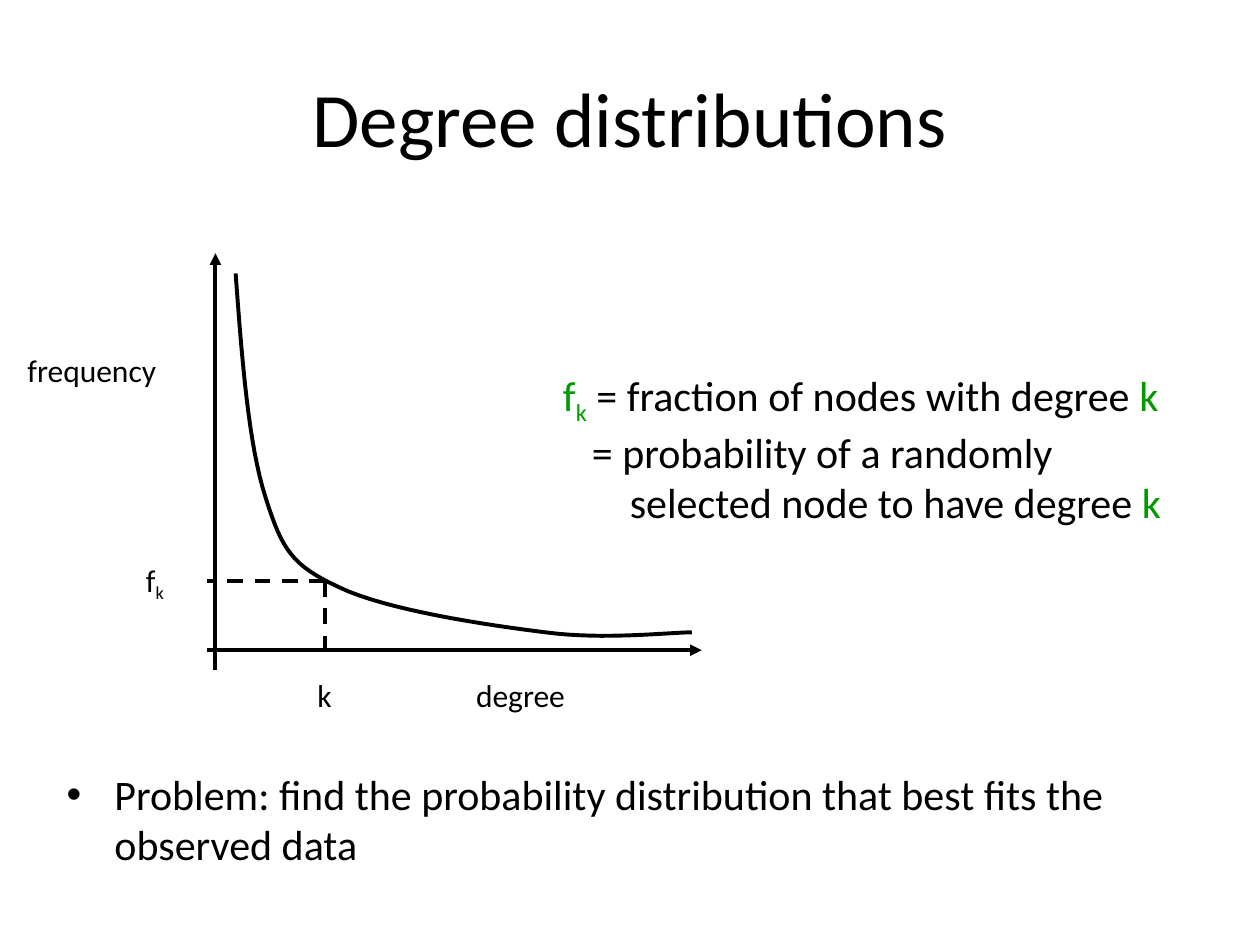
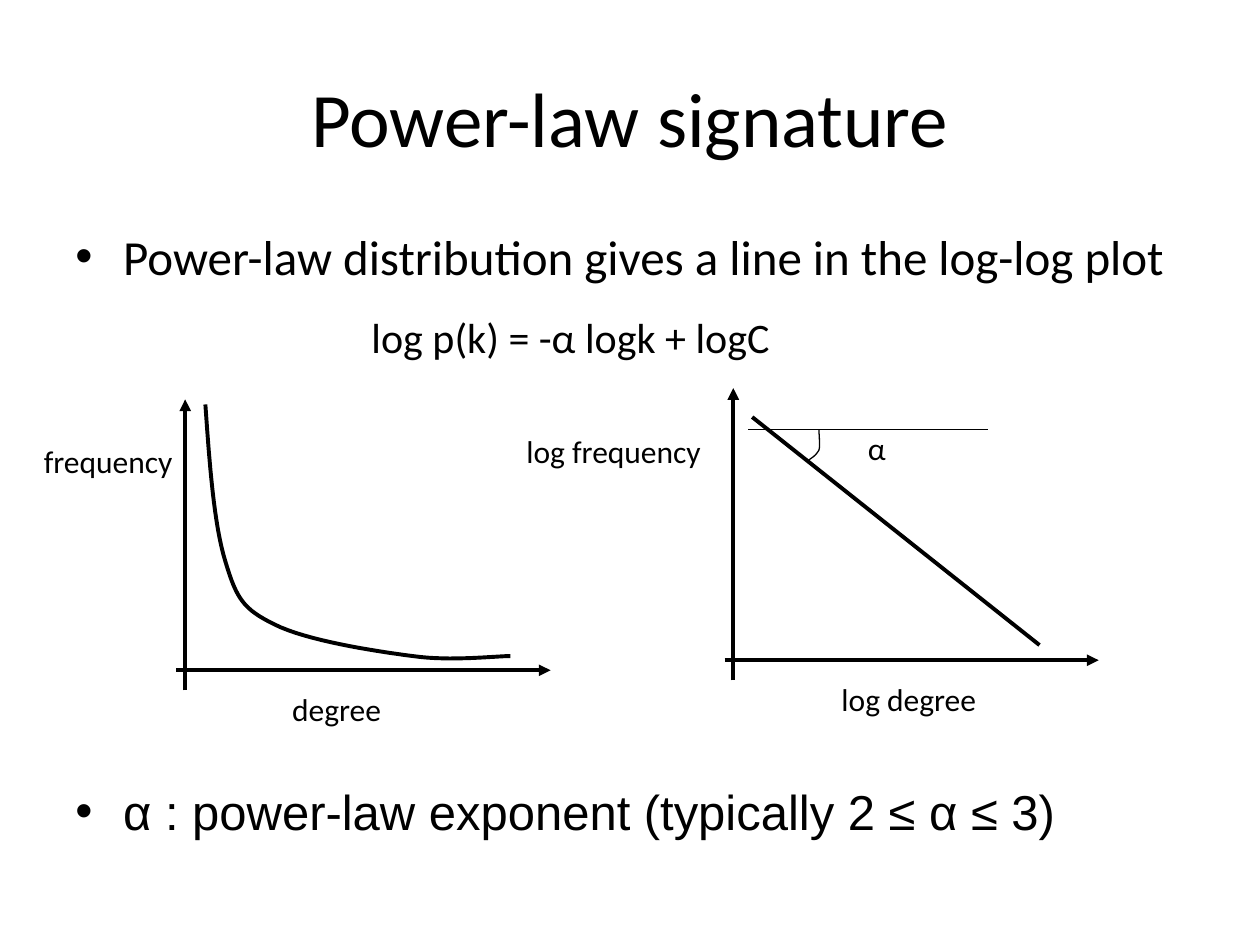
from collections import namedtuple
from dataclasses import dataclass

from lxml import etree
from pptx import Presentation, util as u
from pptx.dml.color import RGBColor
from pptx.enum import dml, shapes as kinds, text
from pptx.oxml import ns

Box = namedtuple("Box", "left top width height")
Run = namedtuple("Run", "text color subscript", defaults=(None, False))
Line = namedtuple("Line", "runs indent", defaults=(0,))


@dataclass(frozen=True)
class Theme:
    """Colours, fonts, type sizes and line widths shared by the slides."""
    ink: str = "000000"
    symbol: str = "009900"
    font: str = "Calibri"
    symbol_font: str = "Arial"
    title: int = 44
    bullet: int = 28
    note: int = 24
    label: int = 18
    thick: float = 2.25
    thin: float = 0.75
    hanging: float = 0.38


THEME = Theme()
TITLE_BOX = Box(0.5, 0.3, 9, 1.25)
DECAY_START = (0, 0)
DECAY_SEGMENTS = (
    ((0.014, 0.234), (0.028, 0.467), (0.066, 0.612)),
    ((0.102, 0.756), (0.125, 0.797), (0.227, 0.856)),
    ((0.33, 0.918), (0.55, 0.959), (0.68, 0.979)),
    ((0.807, 1), (0.948, 0.979), (1, 0.979)),
)
ARC_START = (0.89, 0)
ARC_SEGMENTS = (
    ((0.89, 0.25), (1, 0.5), (0.89, 0.67)),
    ((0.67, 0.83), (0.33, 0.92), (0, 1)),
)


def apply(target, formats):
    """Set every attribute named in formats on target."""
    for name, value in formats.items():
        setattr(target, name, value)


def add_text(shapes, box, lines, size, font=THEME.font, **frame_formats):
    """Add a text box whose lines are made of runs and return its frame."""
    shape = shapes.add_textbox(*map(u.Inches, box))
    frame = shape.text_frame
    apply(frame, {"word_wrap": True, **frame_formats})
    for index, line in enumerate(lines):
        paragraph = frame.add_paragraph() if index else frame.paragraphs[0]
        if line.indent:
            paragraph._p.get_or_add_pPr().set("marL", str(u.Inches(line.indent)))
        for part in line.runs:
            run = paragraph.add_run()
            run.text = part.text
            apply(run.font, {"size": u.Pt(size), "name": font})
            run.font.color.rgb = RGBColor.from_string(part.color or THEME.ink)
            if part.subscript:
                run._r.get_or_add_rPr().set("baseline", "-25000")
    return frame


def add_label(shapes, left, top, width, *runs, size=THEME.label):
    """Add one line of text, given as strings or runs."""
    parts = [Run(part) if isinstance(part, str) else part for part in runs]
    add_text(shapes, Box(left, top, width, size / 45), [Line(parts)], size)


def add_title(slide, words):
    """Add the centred slide title."""
    frame = add_text(slide.shapes, TITLE_BOX, [Line([Run(words)])], THEME.title,
                     vertical_anchor=text.MSO_ANCHOR.MIDDLE)
    frame.paragraphs[0].alignment = text.PP_ALIGN.CENTER


def add_bullet(slide, box, words, size, font=THEME.font):
    """Add a bulleted paragraph with a hanging indent."""
    frame = add_text(slide.shapes, box, [Line([Run(words)], THEME.hanging)], size, font)
    properties = frame.paragraphs[0]._p.get_or_add_pPr()
    properties.set("indent", str(u.Inches(-THEME.hanging)))
    etree.SubElement(properties, ns.qn("a:buFont")).set("typeface", THEME.symbol_font)
    etree.SubElement(properties, ns.qn("a:buChar")).set("char", "•")


def style_line(line, width):
    """Give a line the ink colour and a width."""
    line.color.rgb = RGBColor.from_string(THEME.ink)
    line.width = u.Pt(width)


def add_line(shapes, start, end, width=THEME.thick, dashed=False, arrow=False):
    """Add a straight line, optionally dashed or with an arrowhead at its end."""
    connector = shapes.add_connector(kinds.MSO_CONNECTOR.STRAIGHT,
                                     *map(u.Inches, (*start, *end)))
    style_line(connector.line, width)
    if dashed:
        connector.line.dash_style = dml.MSO_LINE.DASH
    if arrow:
        tail = etree.SubElement(connector.line._get_or_add_ln(), ns.qn("a:tailEnd"))
        tail.set("type", "triangle")
    etree.SubElement(connector._element.spPr, ns.qn("a:effectLst"))


def bezier_points(start, segments, steps=16):
    """Return points along a chain of cubic Bézier segments."""
    points = [start]
    for first, second, end in segments:
        for t in (step / steps for step in range(1, steps + 1)):
            weights = ((1 - t) ** 3, 3 * t * (1 - t) ** 2, 3 * t * t * (1 - t), t ** 3)
            points.append(tuple(sum(w * value for w, value in zip(weights, values))
                                for values in zip(start, first, second, end)))
        start = end
    return points


def add_curve(shapes, box, start, segments, width=THEME.thick):
    """Draw an open curve given in fractions of the box."""
    points = [(u.Inches(box.left + x * box.width), u.Inches(box.top + y * box.height))
              for x, y in bezier_points(start, segments)]
    builder = shapes.build_freeform(*points[0])
    builder.add_line_segments(points[1:], close=False)
    shape = builder.convert_to_shape()
    shape.shadow.inherit = False
    shape.fill.background()
    style_line(shape.line, width)


def add_axes(shapes, box):
    """Draw crossing axes in the box and return their crossing point."""
    right, bottom = box.left + box.width, box.top + box.height
    x, y = box.left + 0.07, bottom - 0.16
    add_line(shapes, (x, bottom), (x, box.top), arrow=True)
    add_line(shapes, (box.left, y), (right, y), arrow=True)
    return x, y


def add_decay_plot(shapes, box, curve_box):
    """Draw axes with a decaying curve and return the axes' crossing point."""
    origin = add_axes(shapes, box)
    add_curve(shapes, curve_box, DECAY_START, DECAY_SEGMENTS)
    return origin


def add_marked_plot(shapes, box):
    """Draw the degree distribution with the point (k, fk) marked."""
    left, top, width, height = box
    base = top + height
    _, axis = add_decay_plot(shapes, box, Box(left + 0.23, top + 0.16, 3.62, 2.91))
    point = left + 0.94, axis - 0.55
    for end in ((point[0], axis), (left, point[1])):
        add_line(shapes, point, end, dashed=True)
    add_label(shapes, left + 2.04, base, 0.98, "degree")
    add_label(shapes, left - 1.52, top + 0.73, 1.3, "frequency")
    add_label(shapes, left + 0.78, base, 0.4, "k")
    add_label(shapes, left - 0.58, point[1] - 0.21, 0.4, "f", Run("k", subscript=True))


def add_definition(shapes, box):
    """Explain the symbol fk."""
    green = THEME.symbol
    add_text(shapes, box, [
        Line([Run("f", green), Run("k", green, True),
              Run(" = fraction of nodes with degree "), Run("k", green)]),
        Line([Run("= probability of a randomly")], 0.23),
        Line([Run("selected node to have degree "), Run("k", green)], 0.53),
    ], THEME.note)


def add_linear_plot(shapes, box):
    """Draw the plot on linear scales with its labels."""
    left, top, _, height = box
    add_decay_plot(shapes, box, Box(left + 0.23, top + 0.04, 2.42, 2.04))
    add_label(shapes, left + 0.82, top + height - 0.05, 0.98, "degree")
    add_label(shapes, left - 1.15, top + 0.29, 1.3, "frequency")


def add_log_plot(shapes, box):
    """Draw the plot on log scales with the slope angle marked."""
    left, top, _, height = box
    level = top + 0.33
    add_axes(shapes, box)
    add_label(shapes, left + 0.83, top + height - 0.05, 1.38, "log degree")
    add_label(shapes, left - 1.67, top + 0.3, 1.7, "log frequency")
    add_line(shapes, (left + 0.22, top + 0.23), (left + 2.5, top + 2.04))
    add_line(shapes, (left + 0.19, level), (left + 2.09, level), THEME.thin)
    add_curve(shapes, Box(left + 0.67, level, 0.09, 0.24), ARC_START, ARC_SEGMENTS, THEME.thin)
    add_label(shapes, left + 1.04, top + 0.28, 0.4, "α")


def build_degree_slide(slide):
    """Build the slide on degree distributions."""
    add_title(slide, "Degree distributions")
    add_bullet(slide, Box(0.43, 6.05, 9, 1.17),
               "Problem: find the probability distribution that best fits the observed data",
               THEME.note)
    add_marked_plot(slide.shapes, Box(1.64, 2.01, 3.93, 3.31))
    add_definition(slide.shapes, Box(4.37, 2.88, 5.5, 1.3))


def build_power_law_slide(slide):
    """Build the slide on the power-law signature."""
    add_title(slide, "Power-law signature")
    add_bullet(slide, Box(0.5, 1.75, 9, 0.6),
               "Power-law distribution gives a line in the log-log plot", THEME.bullet)
    add_bullet(slide, Box(0.5, 6.15, 9, 0.6),
               "α : power-law exponent (typically 2 ≤ α ≤ 3)", THEME.bullet, THEME.symbol_font)
    add_linear_plot(slide.shapes, Box(1.4, 3.17, 2.97, 2.31))
    add_log_plot(slide.shapes.add_group_shape().shapes, Box(5.75, 3.08, 2.97, 2.32))
    add_label(slide.shapes, 2.85, 2.42, 3.77, "log p(k) = -α logk + logC", size=THEME.note)


def main():
    """Create the presentation and save it."""
    presentation = Presentation()
    apply(presentation, {"slide_width": u.Inches(10), "slide_height": u.Inches(7.5)})
    for build in (build_degree_slide, build_power_law_slide):
        build(presentation.slides.add_slide(presentation.slide_layouts[6]))
    presentation.save("out.pptx")


if __name__ == "__main__":
    main()
